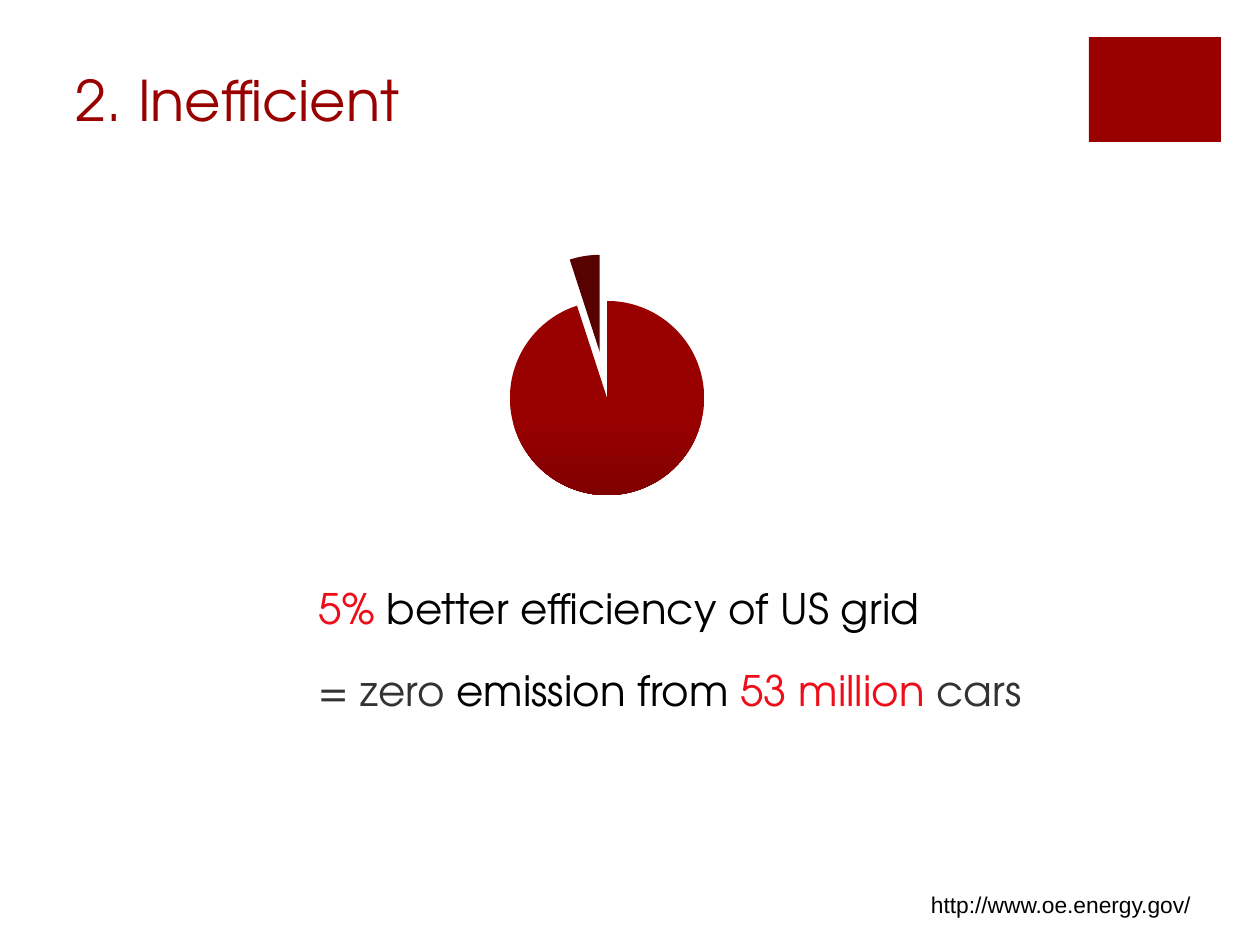
from pptx import Presentation, util as u
from pptx.chart.data import CategoryChartData
from pptx.dml.color import RGBColor
from pptx.enum import chart as charts, shapes, text
from pptx.oxml import parse_xml
from pptx.oxml.ns import nsdecls

PX = u.Inches(1) // 126
COLORS = {name: RGBColor.from_string(value) for name, value in {
    "crimson": "990000", "shade": "800000", "maroon": "580101",
    "red": "ED0E19", "gray": "333333", "black": "000000"}.items()}
HEADING = "TeX Gyre Adventor"

# Each text: box in px, font, size, anchor, insets in px, paragraphs of (words, color)
TEXTS = [
    ((63, 62, 897, 77), HEADING, 32, text.MSO_ANCHOR.BOTTOM, (13, 6),
     [[("2. Inefficient", "crimson")]]),
    ((306, 577, 866, 173), HEADING, 24, text.MSO_ANCHOR.TOP, (13, 6),
     [[("5% ", "red"), ("better efficiency of US grid", "black")],
      [("= zero ", "gray"), ("emission from ", "black"),
       ("53 million", "red"), (" cars", "gray")]]),
    ((922, 886, 289, 37), "Arial", 13, text.MSO_ANCHOR.TOP, (9, 5),
     [[("http://www.oe.energy.gov/", "black")]]),
]
CORNER_BLOCK = (1089, 37, 132, 105)
PIE_BOX = (431, 238, 345, 277)
PIE_DIAMETER = 242  # including the exploded slices
SHARES = {"1": 95, "2": 5}


def emu(box):
    return [length * PX for length in box]


def add_text(slide, box, font, size, anchor, insets, paragraphs):
    frame = slide.shapes.add_textbox(*emu(box)).text_frame
    across, down = emu(insets)
    settings = {"word_wrap": True, "vertical_anchor": anchor,
                "margin_left": across, "margin_right": across,
                "margin_top": down, "margin_bottom": down}
    for name, value in settings.items():
        setattr(frame, name, value)
    for index, phrases in enumerate(paragraphs):
        paragraph = frame.add_paragraph() if index else frame.paragraphs[0]
        if index:
            paragraph.space_before = u.Pt(18)
        for words, color in phrases:
            run = paragraph.add_run()
            run.text = words
            run.font.name, run.font.size = font, u.Pt(size)
            run.font.color.rgb = COLORS[color]


def add_pie(slide):
    data = CategoryChartData()
    data.categories = list(SHARES)
    data.add_series("Series 1", list(SHARES.values()))
    pie = slide.shapes.add_chart(charts.XL_CHART_TYPE.PIE, *emu(PIE_BOX), data).chart
    pie.has_legend = pie.has_title = False
    pie.font.name, pie.font.size = HEADING, u.Pt(10)
    pie.font.color.rgb = COLORS["black"]
    plot = pie.plots[0]
    plot.vary_by_categories = False
    series = plot.series[0]

    large, small = (series.points[i].format for i in range(len(SHARES)))
    large.fill.gradient()
    large.fill.gradient_angle = 270
    for stop, (color, position) in zip(large.fill.gradient_stops,
                                       [("crimson", 0.6), ("shade", 1)]):
        stop.color.rgb, stop.position = COLORS[color], position
    small.fill.solid()
    small.fill.fore_color.rgb = COLORS["maroon"]
    for slice_format in (large, small):
        slice_format.line.fill.background()

    explosion = f'<c:explosion {nsdecls("c")} val="24"/>'
    for point in series._element.findall("c:dPt", series._element.nsmap):
        point.find("c:spPr", point.nsmap).addprevious(parse_xml(explosion))
    series._element.find("c:dPt", series._element.nsmap).addprevious(parse_xml(explosion))

    width, height = (PIE_DIAMETER / side for side in PIE_BOX[2:])
    fractions = {"x": (1 - width) / 2, "y": (1 - height) / 2, "w": width, "h": height}
    entries = "".join(f'<c:{name} val="{value:.2f}"/>' for name, value in fractions.items())
    area = pie._chartSpace.chart.plotArea
    for layout in area.findall("c:layout", area.nsmap):
        area.remove(layout)
    area.insert(0, parse_xml(
        f'<c:layout {nsdecls("c")}><c:manualLayout><c:layoutTarget val="inner"/>'
        f'<c:xMode val="edge"/><c:yMode val="edge"/>{entries}'
        '</c:manualLayout></c:layout>'))


def main():
    deck = Presentation()
    deck.slide_width, deck.slide_height = u.Inches(10), u.Inches(7.5)
    slide = deck.slides.add_slide(deck.slide_layouts[6])
    block = slide.shapes.add_shape(shapes.MSO_SHAPE.RECTANGLE, *emu(CORNER_BLOCK))
    block.shadow.inherit = False
    block.fill.solid()
    block.fill.fore_color.rgb = COLORS["crimson"]
    block.line.fill.background()
    for entry in TEXTS:
        add_text(slide, *entry)
    add_pie(slide)
    deck.save("out.pptx")


if __name__ == "__main__":
    main()
